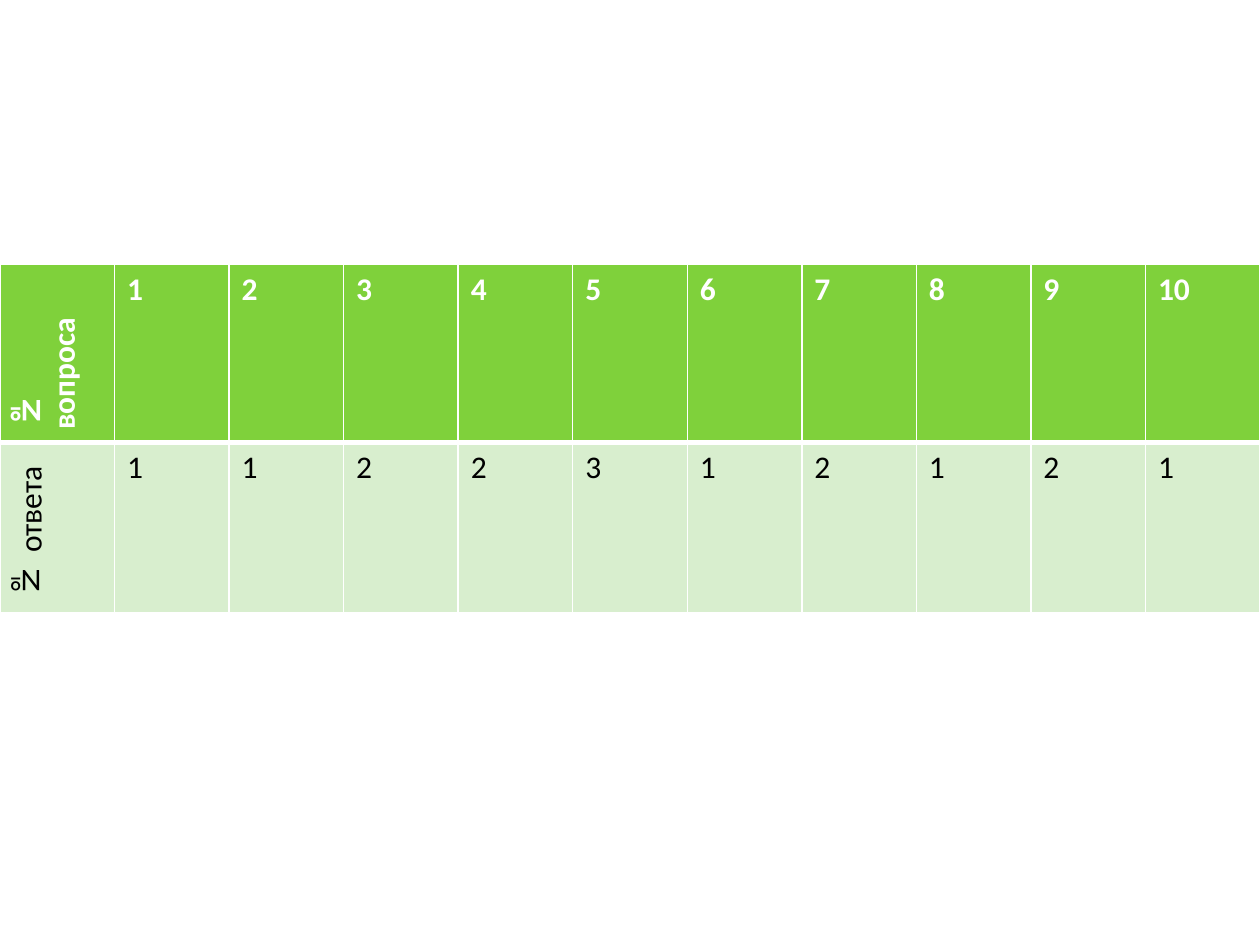
from lxml import etree
from pptx import Presentation
from pptx.dml.color import RGBColor
from pptx.oxml.ns import qn
from pptx.util import Inches, Pt

COLORS = {"header": "7FD13B", "answer": "D8EECE", "white": "FFFFFF", "black": "000000"}
THIN, THICK = 1, 3

ROWS = [
    # label, values, fill, text colour, bold, height, top border, bottom border
    ("№ вопроса", range(1, 11), "header", "white", True, 1.41, THIN, THICK),
    ("№ ответа", [1, 1, 2, 2, 3, 1, 2, 1, 2, 1], "answer", "black", False, 1.35, THICK, THIN),
]


def add_border(cell, side, points):
    line = etree.SubElement(cell._tc.get_or_add_tcPr(), qn(f"a:ln{side}"), w=str(Pt(points)))
    solid = etree.SubElement(line, qn("a:solidFill"))
    etree.SubElement(solid, qn("a:srgbClr"), val=COLORS["white"])


prs = Presentation()
prs.slide_width, prs.slide_height = Inches(10), Inches(7.5)
slide = prs.slides.add_slide(prs.slide_layouts[6])

column_count = 1 + len(ROWS[0][1])
table_height = Inches(sum(row[5] for row in ROWS))
answers = slide.shapes.add_table(
    len(ROWS), column_count, 0, Inches(2.1), prs.slide_width, table_height
).table
for column in answers.columns:
    column.width = prs.slide_width // column_count

for r, (label, values, fill, text_color, bold, height, top, bottom) in enumerate(ROWS):
    answers.rows[r].height = Inches(height)
    for c, content in enumerate([label, *values]):
        cell = answers.cell(r, c)
        for side, points in (("L", THIN), ("R", THIN), ("T", top), ("B", bottom)):
            add_border(cell, side, points)
        cell.fill.solid()
        cell.fill.fore_color.rgb = RGBColor.from_string(COLORS[fill])
        cell.text = str(content)
        font = cell.text_frame.paragraphs[0].font
        font.name, font.size, font.bold = "Calibri", Pt(18), bold
        font.color.rgb = RGBColor.from_string(COLORS[text_color])
    answers.cell(r, 0)._tc.get_or_add_tcPr().set("vert", "vert270")

prs.save("out.pptx")
